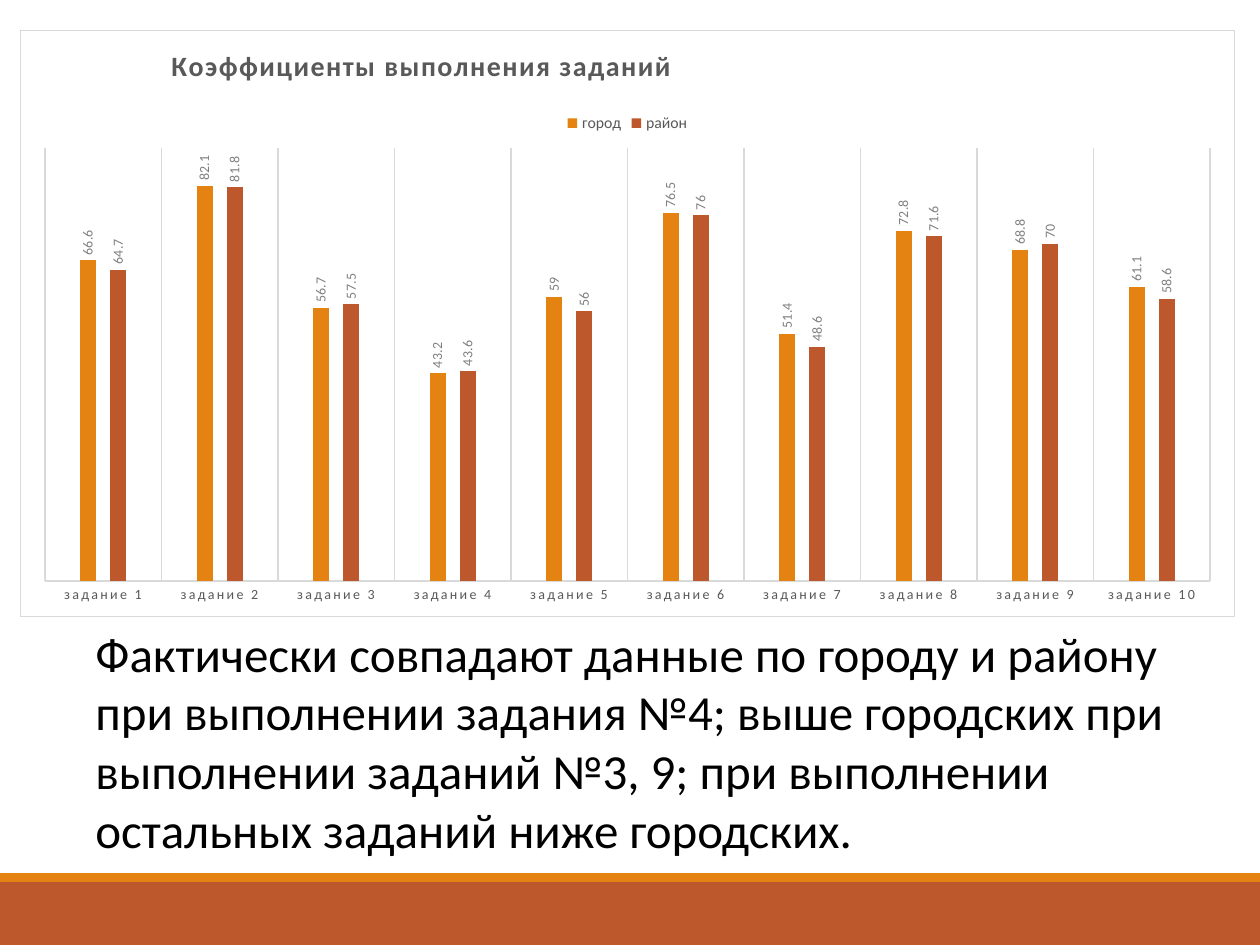
from pptx import Presentation
from pptx.chart.data import CategoryChartData
from pptx.dml.color import RGBColor
from pptx.enum.chart import XL_CHART_TYPE as ChartType
from pptx.enum.chart import XL_LABEL_POSITION as LabelPosition
from pptx.enum.chart import XL_LEGEND_POSITION as LegendPosition
from pptx.enum.chart import XL_TICK_MARK as TickMark
from pptx.enum.shapes import MSO_SHAPE as Preset
from pptx.enum.text import MSO_AUTO_SIZE as AutoSize
from pptx.oxml import parse_xml
from pptx.oxml.ns import nsdecls, qn
from pptx.util import Pt

ORANGE = RGBColor(0xE4, 0x83, 0x12)
RUST = RGBColor(0xBD, 0x58, 0x2C)
BLACK = RGBColor(0x00, 0x00, 0x00)
DARK_GRAY = RGBColor(0x59, 0x59, 0x59)
GRAY = RGBColor(0x80, 0x80, 0x80)
LIGHT_GRAY = RGBColor(0xD9, 0xD9, 0xD9)
WHITE = RGBColor(0xFF, 0xFF, 0xFF)

HEADING = "Коэффициенты выполнения заданий"
TASKS = [f"задание {number}" for number in range(1, 11)]
RESULTS = {
    "город": (ORANGE, (66.6, 82.1, 56.7, 43.2, 59, 76.5, 51.4, 72.8, 68.8, 61.1)),
    "район": (RUST, (64.7, 81.8, 57.5, 43.6, 56, 76, 48.6, 71.6, 70, 58.6)),
}
CONCLUSION = (
    "Фактически совпадают данные по городу и району при выполнении задания №4; "
    "выше городских при выполнении заданий №3, 9; "
    "при выполнении остальных заданий ниже городских."
)


def px(length):
    return length * 914400 // 126


def apply(target, values):
    for name, value in values.items():
        setattr(target, name, value)


def place(parent, index, **fractions):
    for old in parent.findall(qn("c:layout")):
        parent.remove(old)
    inner = '<c:layoutTarget val="inner"/>' if "w" in fractions else ""
    modes = "".join(f'<c:{key}Mode val="edge"/>' for key in "xy")
    sizes = "".join(f'<c:{key} val="{value}"/>' for key, value in fractions.items())
    parent.insert(index, parse_xml(
        f'<c:layout {nsdecls("c")}><c:manualLayout>{inner}{modes}{sizes}'
        "</c:manualLayout></c:layout>"))


class SlideBuilder:
    font_name = "Calibri"

    def __init__(self, slide):
        self.slide = slide

    def style(self, font, size, color, bold=False):
        apply(font, {"name": self.font_name, "size": Pt(size), "bold": bold})
        font.color.rgb = color

    def band(self, x, y, width, height, color):
        strip = self.slide.shapes.add_shape(
            Preset.RECTANGLE, px(x), px(y), px(width), px(height))
        strip.shadow.inherit = False
        strip.fill.solid()
        strip.fill.fore_color.rgb = color
        strip.line.fill.background()

    def text(self, x, y, width, height, wording, size, indent):
        frame = self.slide.shapes.add_textbox(
            px(x), px(y), px(width), px(height)).text_frame
        apply(frame, {"word_wrap": True, "auto_size": AutoSize.SHAPE_TO_FIT_TEXT})
        paragraph = frame.paragraphs[0]
        properties = paragraph._p.get_or_add_pPr()
        properties.set("marL", str(px(indent)))
        properties.set("indent", "0")
        run = paragraph.add_run()
        run.text = wording
        self.style(run.font, size, BLACK)

    def columns(self, x, y, width, height, heading, categories, results):
        data = CategoryChartData()
        data.categories = categories
        for name, (_, values) in results.items():
            data.add_series(name, values)
        chart = self.slide.shapes.add_chart(
            ChartType.COLUMN_CLUSTERED, px(x), px(y), px(width), px(height), data).chart
        self.style(chart.font, 10, BLACK)
        self.heading(chart, heading)
        self.legend(chart)
        self.axes(chart)
        plot = chart.plots[0]
        apply(plot, {"gap_width": 444, "overlap": -90, "vary_by_categories": False})
        for series, (color, _) in zip(plot.series, results.values()):
            self.series(series, color)
        self.frame(chart)

    def heading(self, chart, wording):
        chart.has_title = True
        title = chart.chart_title
        title.include_in_layout = False
        run = title.text_frame.paragraphs[0].add_run()
        run.text = wording
        self.style(run.font, 16, DARK_GRAY, bold=True)
        run.font._element.set("spc", "100")
        place(title._element, 1, x=0.12, y=0.02)

    def legend(self, chart):
        chart.has_legend = True
        apply(chart.legend, {"position": LegendPosition.TOP, "include_in_layout": False})
        self.style(chart.legend.font, 9, DARK_GRAY)

    def axes(self, chart):
        tasks = chart.category_axis
        apply(tasks, {"major_tick_mark": TickMark.NONE, "minor_tick_mark": TickMark.NONE,
                      "has_major_gridlines": True})
        self.style(tasks.tick_labels.font, 8, DARK_GRAY)
        tasks._element.find(".//" + qn("a:defRPr")).set("spc", "120")
        for line in (tasks.format.line, tasks.major_gridlines.format.line):
            line.color.rgb = LIGHT_GRAY
            line.width = Pt(0.75)
        apply(chart.value_axis, {"visible": False, "has_major_gridlines": False,
                                 "minimum_scale": 0, "maximum_scale": 90})

    def series(self, series, color):
        series.format.fill.solid()
        series.format.fill.fore_color.rgb = color
        labels = series.data_labels
        apply(labels, {"show_value": True, "position": LabelPosition.OUTSIDE_END})
        self.style(labels.font, 8, GRAY)
        direction = labels._element.find(".//" + qn("a:bodyPr"))
        direction.set("rot", "-5400000")
        direction.set("vert", "horz")

    def frame(self, chart):
        body = chart._chartSpace.find(qn("c:chart"))
        place(body.find(qn("c:plotArea")), 0, x=0.02, y=0.2, w=0.96, h=0.74)
        body.addnext(parse_xml(
            f'<c:spPr {nsdecls("c", "a")}>'
            f'<a:solidFill><a:srgbClr val="{WHITE}"/></a:solidFill>'
            f'<a:ln w="{Pt(0.75)}"><a:solidFill><a:srgbClr val="{LIGHT_GRAY}"/>'
            "</a:solidFill></a:ln></c:spPr>"))


def main():
    presentation = Presentation()
    apply(presentation, {"slide_width": px(1260), "slide_height": px(945)})
    builder = SlideBuilder(presentation.slides.add_slide(presentation.slide_layouts[6]))
    builder.band(0, 882, 1260, 63, RUST)
    builder.band(0, 873, 1260, 9, ORANGE)
    builder.text(20, 617, 1215, 251, CONCLUSION, size=28, indent=63)
    builder.columns(20, 30, 1215, 587, HEADING, TASKS, RESULTS)
    presentation.save("out.pptx")


if __name__ == "__main__":
    main()
